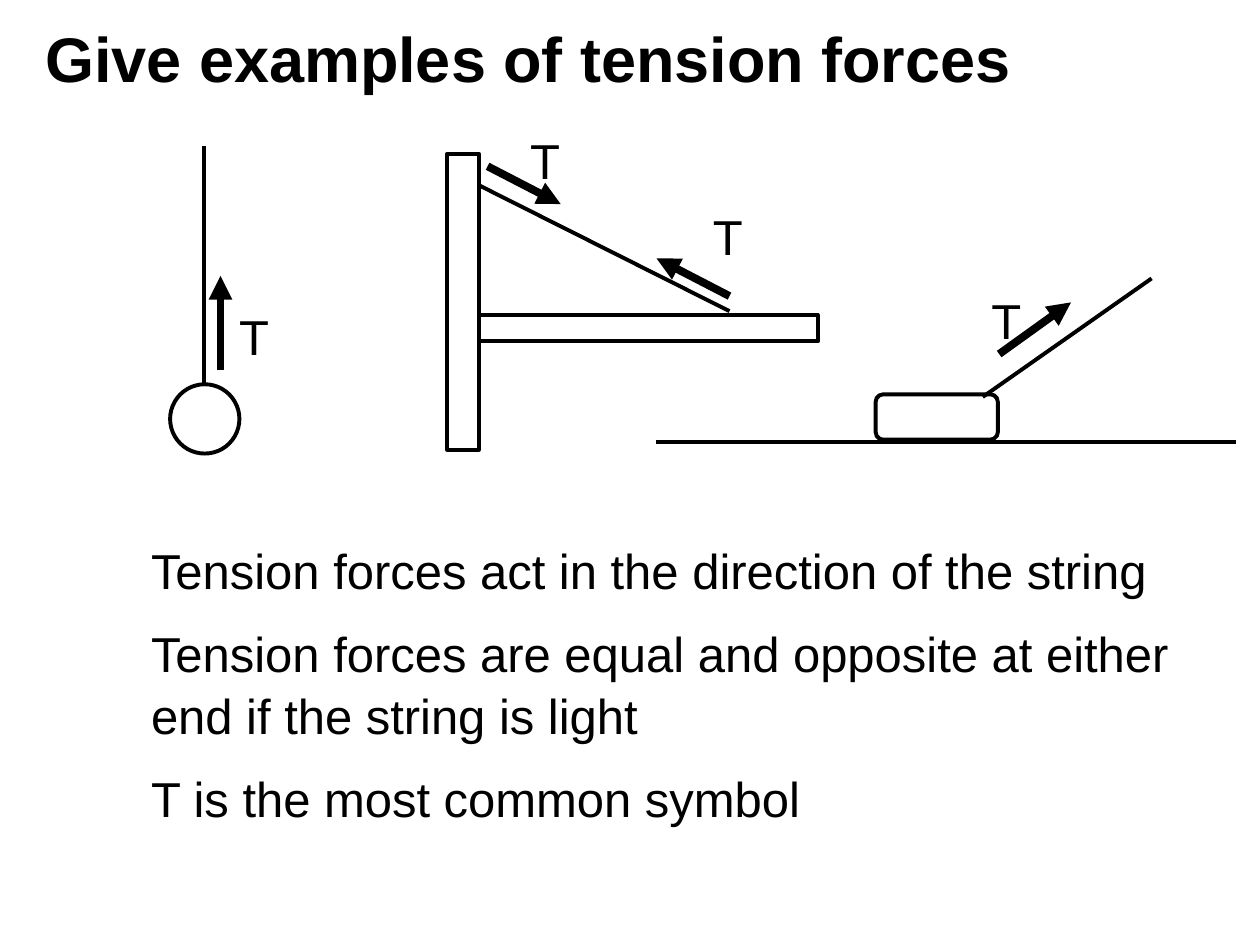
from typing import NamedTuple

from lxml.etree import SubElement
from pptx import Presentation
from pptx.dml.color import RGBColor
from pptx.enum.shapes import MSO_CONNECTOR, MSO_SHAPE
from pptx.oxml.ns import qn
from pptx.slide import Slide
from pptx.util import Inches, Pt

INK = "000000"
PAPER = "FFFFFF"
THIN = 2.25
THICK = 4.5


class Segment(NamedTuple):
    """Ends of a straight line, in inches."""
    x1: float
    y1: float
    x2: float
    y2: float


class Body(NamedTuple):
    """An outlined object, in inches."""
    kind: MSO_SHAPE
    left: float
    top: float
    width: float
    height: float


class Label(NamedTuple):
    """Place of a tension symbol, in inches."""
    left: float
    top: float


PENDULUM_STRING = Segment(1.62, 1.16, 1.62, 3.26)
BRACKET_WIRE = Segment(3.8, 1.47, 5.79, 2.47)
TOW_ROPE = Segment(7.8, 3.15, 9.14, 2.21)
GROUND = Segment(5.21, 3.51, 9.81, 3.51)

BODIES = [
    Body(MSO_SHAPE.OVAL, 1.35, 3.05, 0.55, 0.55),
    Body(MSO_SHAPE.RECTANGLE, 3.8, 2.5, 2.69, 0.21),
    Body(MSO_SHAPE.RECTANGLE, 3.55, 1.22, 0.25, 2.35),
    Body(MSO_SHAPE.ROUNDED_RECTANGLE, 6.95, 3.13, 0.97, 0.36),
]

TENSIONS = [
    Segment(5.79, 2.35, 5.21, 2.05),
    Segment(3.87, 1.32, 4.45, 1.62),
    Segment(1.75, 2.94, 1.75, 2.19),
    Segment(7.93, 2.81, 8.5, 2.4),
]

LABELS = [Label(5.56, 1.57), Label(1.8, 2.36), Label(4.11, 0.96), Label(7.77, 2.23)]

FACTS = [
    "Tension forces act in the direction of the string",
    "Tension forces are equal and opposite at either end if the string is light",
    "T is the most common symbol",
]


def colour(value: str) -> RGBColor:
    """Turn a hex string into a colour."""
    return RGBColor.from_string(value)


def add_text(page: Slide, lines: list[str], left: float, top: float, width: float,
             height: float, *, size: float = 28, bold: bool = False, wrap: bool = True,
             spacing: float = 1.05, after: float = 12) -> None:
    """Write one paragraph per line in a text box."""
    box = page.shapes.add_textbox(Inches(left), Inches(top), Inches(width), Inches(height))
    frame = box.text_frame
    frame.word_wrap = wrap
    for index, line in enumerate(lines):
        para = frame.add_paragraph() if index else frame.paragraphs[0]
        para.line_spacing = spacing
        para.space_after = Pt(after)
        span = para.add_run()
        span.text = line
        span.font.name = "Arial"
        span.font.size = Pt(size)
        span.font.bold = bold
        span.font.color.rgb = colour(INK)


def add_line(page: Slide, segment: Segment, weight: float = THIN, arrow: bool = False) -> None:
    """Draw a straight line, with an arrowhead at its end if wanted."""
    line = page.shapes.add_connector(MSO_CONNECTOR.STRAIGHT, *map(Inches, segment))
    line.line.color.rgb = colour(INK)
    line.line.width = Pt(weight)
    if arrow:
        SubElement(line.line._get_or_add_ln(), qn("a:tailEnd"), type="triangle")
    SubElement(line._element.spPr, qn("a:effectLst"))


def add_body(page: Slide, body: Body) -> None:
    """Draw an outlined object."""
    kind, *bounds = body
    shape = page.shapes.add_shape(kind, *map(Inches, bounds))
    shape.shadow.inherit = False
    shape.fill.solid()
    shape.fill.fore_color.rgb = colour(PAPER)
    shape.line.color.rgb = colour(INK)
    shape.line.width = Pt(THIN)


def main() -> None:
    """Build the slide and save the deck."""
    deck = Presentation()
    deck.slide_width = Inches(10)
    deck.slide_height = Inches(7.5)
    page = deck.slides.add_slide(deck.slide_layouts[6])

    add_text(page, ["Give examples of tension forces"], 0.26, 0.17, 9.54, 0.65,
             size=36, bold=True, spacing=0.9, after=0)
    for segment in (PENDULUM_STRING, BRACKET_WIRE):
        add_line(page, segment)
    for body in BODIES:
        add_body(page, body)
    for segment in (TOW_ROPE, GROUND):
        add_line(page, segment)
    for tension in TENSIONS:
        add_line(page, tension, THICK, arrow=True)
    for label in LABELS:
        add_text(page, ["T"], label.left, label.top, 0.44, 0.57, wrap=False)
    add_text(page, FACTS, 1.1, 4.22, 8.71, 2.32)

    deck.save("out.pptx")


if __name__ == "__main__":
    main()
